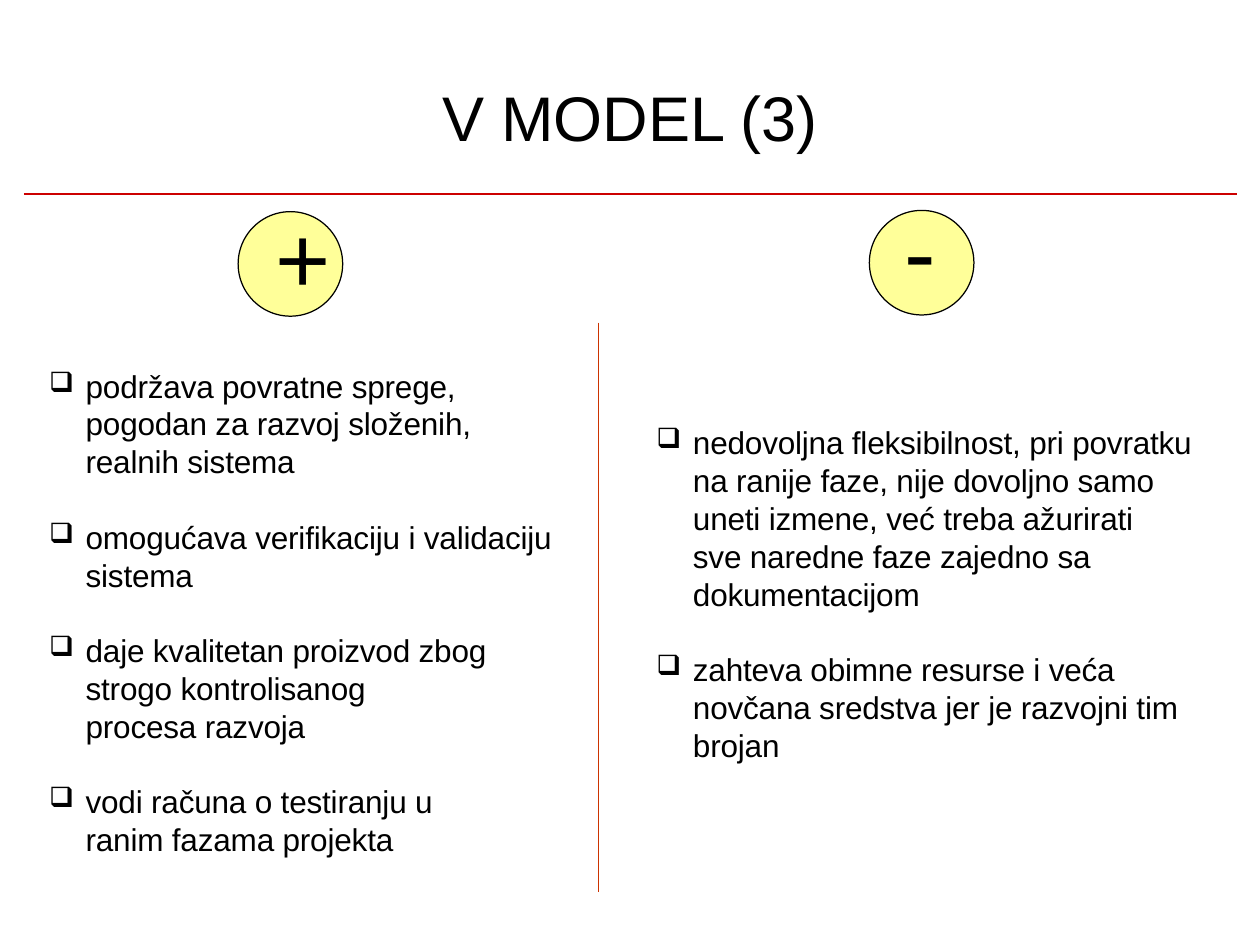
from lxml.etree import SubElement
from pptx import Presentation
from pptx.dml.color import RGBColor
from pptx.enum.shapes import MSO_CONNECTOR, MSO_SHAPE
from pptx.enum.text import MSO_ANCHOR, PP_ALIGN
from pptx.oxml.ns import qn
from pptx.util import Inches, Pt


def color(hex_value):
    return RGBColor.from_string(hex_value)


class SlideBuilder:
    FONT = "Arial"
    BLACK = "000000"
    FRAME = {"word_wrap": True, "margin_left": 0, "margin_top": 0,
             "margin_right": 0, "margin_bottom": 0}

    def __init__(self, slide):
        self.slide = slide

    def text_box(self, left, top, width, height, anchor=MSO_ANCHOR.TOP):
        shape = self.slide.shapes.add_textbox(
            Inches(left), Inches(top), Inches(width), Inches(height))
        frame = shape.text_frame
        for name, value in {**self.FRAME, "vertical_anchor": anchor}.items():
            setattr(frame, name, value)
        return frame

    def paragraph(self, frame, text, size, first=False, spacing=0, **formats):
        paragraph = frame.paragraphs[0] if first else frame.add_paragraph()
        paragraph.text = text
        for name, value in formats.items():
            setattr(paragraph, name, value)
        for run in paragraph.runs:
            for name, value in {"name": self.FONT, "size": Pt(size)}.items():
                setattr(run.font, name, value)
            run.font.color.rgb = color(self.BLACK)
            if spacing:
                run._r.get_or_add_rPr().set("spc", str(spacing))
        return paragraph

    def item(self, frame, text, bullet=True, **formats):
        paragraph = self.paragraph(frame, text, 18, spacing=-10, **formats)
        properties = paragraph._p.get_or_add_pPr()
        properties.set("marL", str(Inches(0.31)))
        properties.set("indent", str(Inches(-0.29 if bullet else 0)))
        if bullet:
            bullet_color = SubElement(properties, qn("a:buClr"))
            SubElement(bullet_color, qn("a:srgbClr"), val=self.BLACK)
            SubElement(properties, qn("a:buSzPct"), val="89000")
            SubElement(properties, qn("a:buChar"), char="❑")

    def circle(self, left, top, diameter):
        shape = self.slide.shapes.add_shape(
            MSO_SHAPE.OVAL, Inches(left), Inches(top),
            Inches(diameter), Inches(diameter))
        shape.shadow.inherit = False
        shape.fill.solid()
        shape.fill.fore_color.rgb = color("FFFF99")
        shape.line.color.rgb = color(self.BLACK)
        shape.line.width = Pt(0.72)

    def line(self, start, end, hex_value, width):
        points = [Inches(value) for value in (*start, *end)]
        connector = self.slide.shapes.add_connector(MSO_CONNECTOR.STRAIGHT, *points)
        connector.line.color.rgb = color(hex_value)
        connector.line.width = Pt(width)
        SubElement(connector._element.spPr, qn("a:effectLst"))


def main():
    presentation = Presentation()
    presentation.slide_width, presentation.slide_height = Inches(10), Inches(7.5)
    slide = presentation.slides.add_slide(presentation.slide_layouts[6])
    builder = SlideBuilder(slide)
    gap = Pt(21.6)

    # Circles behind the signs
    for left, top in ((6.9, 1.67), (1.89, 1.68)):
        builder.circle(left, top, 0.83)

    # Title
    title = builder.text_box(0.5, 0.62, 9, 0.61, MSO_ANCHOR.MIDDLE)
    builder.paragraph(title, "V MODEL (3)", 36, first=True, alignment=PP_ALIGN.CENTER)

    # Drawbacks
    drawbacks = builder.text_box(5.19, 3.36, 4.33, 2.71)
    builder.item(drawbacks, "nedovoljna fleksibilnost, pri povratku na ranije faze, "
                 "nije dovoljno samo uneti izmene, već treba ažurirati", first=True)
    builder.item(drawbacks, "sve naredne faze zajedno sa dokumentacijom", bullet=False)
    builder.item(drawbacks, "zahteva obimne resurse i veća novčana sredstva "
                 "jer je razvojni tim brojan", space_before=gap)

    # Column divider
    builder.line((4.75, 2.56), (4.75, 7.08), "CC3300", 0.72)

    # Advantages, headed by the plus sign
    advantages = builder.text_box(0.37, 1.58, 4.07, 5.31)
    builder.paragraph(advantages, "+", 54, first=True, alignment=PP_ALIGN.CENTER)
    for text, space_before in (
        ("podržava povratne sprege, pogodan za razvoj složenih, realnih sistema", Pt(30.9)),
        ("omogućava verifikaciju i validaciju sistema", gap),
        ("daje kvalitetan proizvod zbog strogo kontrolisanog\vprocesa razvoja", gap),
        ("vodi računa o testiranju u\vranim fazama projekta", gap),
    ):
        builder.item(advantages, text, space_before=space_before)

    # Minus sign
    minus = builder.text_box(7.18, 1.52, 0.28, 0.91)
    builder.paragraph(minus, "-", 54, first=True)

    # Rule under the title
    builder.line((0.19, 1.54), (9.82, 1.54), "CC0000", 0.96)

    presentation.save("out.pptx")


if __name__ == "__main__":
    main()
